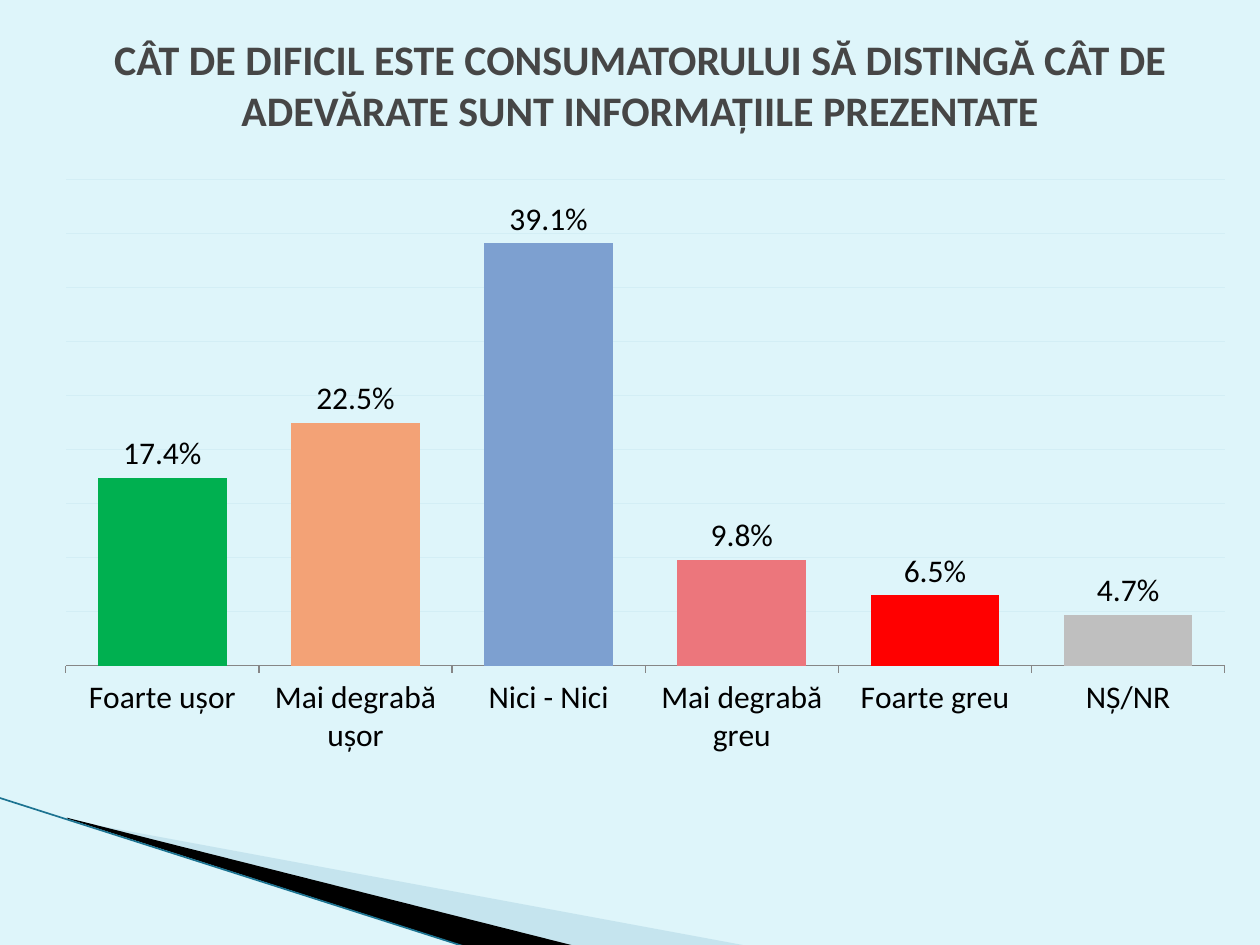
"""Build a slide with a column chart of how hard it is to judge information."""
from typing import NamedTuple

from lxml.etree import SubElement
from pptx import Presentation
from pptx.chart.data import CategoryChartData
from pptx.dml.color import RGBColor
from pptx.enum.chart import XL_CHART_TYPE, XL_LABEL_POSITION, XL_TICK_LABEL_POSITION, XL_TICK_MARK
from pptx.enum.text import MSO_ANCHOR, PP_ALIGN
from pptx.oxml.ns import qn
from pptx.slide import Slide
from pptx.util import Pt

BACKGROUND = RGBColor(0xDE, 0xF5, 0xFA)
PALE_BLUE = RGBColor(0xA0, 0xCB, 0xDC)
TEAL = RGBColor(0x1C, 0x73, 0x91)
GRID = RGBColor(0xD3, 0xEE, 0xF5)
AXIS = RGBColor(0x86, 0x86, 0x86)
TITLE_GREY = RGBColor(0x46, 0x46, 0x46)
BLACK = RGBColor(0x00, 0x00, 0x00)
GREEN = RGBColor(0x00, 0xB0, 0x50)
ORANGE = RGBColor(0xF3, 0xA2, 0x76)
BLUE = RGBColor(0x7D, 0xA0, 0xD0)
PINK = RGBColor(0xEC, 0x76, 0x7C)
RED = RGBColor(0xFF, 0x00, 0x00)
GREY = RGBColor(0xBF, 0xBF, 0xBF)

FONT = "Calibri"
PERCENT = "0.0%"
TITLE = "CÂT DE DIFICIL ESTE CONSUMATORULUI SĂ DISTINGĂ CÂT DE ADEVĂRATE SUNT INFORMAȚIILE PREZENTATE"


class Wedge(NamedTuple):
    """A filled corner decoration."""

    points: list[tuple[float, float]]
    color: RGBColor
    opacity: int = 100


class Answer(NamedTuple):
    """One column of the chart."""

    label: str
    share: float
    color: RGBColor


WEDGES = [
    Wedge([(39.6, 468.7), (428.4, 540.7), (328.3, 540.7), (39.6, 468)], PALE_BLUE, 40),
    Wedge([(38.2, 467.3), (329, 540.7), (267.8, 541.4), (38.9, 468)], BLACK),
]
ANSWERS = [
    Answer("Foarte ușor", 0.174, GREEN),
    Answer("Mai degrabă ușor", 0.225, ORANGE),
    Answer("Nici - Nici", 0.391, BLUE),
    Answer("Mai degrabă greu", 0.098, PINK),
    Answer("Foarte greu", 0.065, RED),
    Answer("NȘ/NR", 0.047, GREY),
]


def set_font(font, color: RGBColor, **values) -> None:
    """Apply a colour and format values to a font."""
    for name, value in values.items():
        setattr(font, name, value)
    font.color.rgb = color


def add_wedge(s: Slide, wedge: Wedge) -> None:
    """Draw one corner wedge."""
    start, *rest = [(Pt(x), Pt(y)) for x, y in wedge.points]
    builder = s.shapes.build_freeform(*start)
    builder.add_line_segments(rest)
    sp = builder.convert_to_shape()
    sp.shadow.inherit = False
    sp.line.fill.background()
    sp.fill.solid()
    sp.fill.fore_color.rgb = wedge.color
    if wedge.opacity < 100:
        color = sp.fill._xPr.find(f"{qn('a:solidFill')}/{qn('a:srgbClr')}")
        SubElement(color, qn("a:alpha"), val=str(wedge.opacity * 1000))


def add_edge(s: Slide) -> None:
    """Draw the thin line along the wedges."""
    line = s.shapes.add_connector(1, Pt(-0.7), Pt(455.8), Pt(267.1), Pt(541.4))
    line.line.color.rgb = TEAL
    line.line.width = Pt(0.95)
    SubElement(line._element.spPr, qn("a:effectLst"))


def add_title(s: Slide) -> None:
    """Write the centred title."""
    tf = s.shapes.add_textbox(Pt(41.8), Pt(18), Pt(648), Pt(60)).text_frame
    tf.word_wrap = True
    tf.vertical_anchor = MSO_ANCHOR.MIDDLE
    p = tf.paragraphs[0]
    p.alignment = PP_ALIGN.CENTER
    r = p.add_run()
    r.text = TITLE
    set_font(r.font, TITLE_GREY, name=FONT, size=Pt(24), bold=True)


def add_answer_chart(s: Slide, answers: list[Answer]) -> None:
    """Draw the column chart of answers."""
    data = CategoryChartData(number_format=PERCENT)
    data.categories = [a.label for a in answers]
    data.add_series("Series 1", [a.share for a in answers])
    chart = s.shapes.add_chart(
        XL_CHART_TYPE.COLUMN_CLUSTERED, Pt(23.8), Pt(95.8), Pt(689.8), Pt(342), data
    ).chart
    set_font(chart.font, BLACK, name=FONT, size=Pt(18))
    chart.has_title = False
    chart.has_legend = False

    values = chart.value_axis
    formats = {"visible": False, "minimum_scale": 0, "maximum_scale": 0.45,
               "major_unit": 0.05, "has_major_gridlines": True}
    for name, value in formats.items():
        setattr(values, name, value)
    values.tick_labels.number_format = PERCENT
    values.tick_labels.number_format_is_linked = False
    grid = values.major_gridlines.format.line
    grid.color.rgb = GRID
    grid.width = Pt(0.75)

    categories = chart.category_axis
    categories.major_tick_mark = XL_TICK_MARK.OUTSIDE
    categories.tick_label_position = XL_TICK_LABEL_POSITION.NEXT_TO_AXIS
    categories.format.line.color.rgb = AXIS

    plot = chart.plots[0]
    plot.gap_width = 50
    plot.vary_by_categories = False
    plot.has_data_labels = True
    formats = {"show_value": True, "number_format": PERCENT,
               "number_format_is_linked": False,
               "position": XL_LABEL_POSITION.OUTSIDE_END}
    for name, value in formats.items():
        setattr(plot.data_labels, name, value)
    for i, answer in enumerate(answers):
        fill = plot.series[0].points[i].format.fill
        fill.solid()
        fill.fore_color.rgb = answer.color


def main() -> None:
    """Build and save the slide."""
    prs = Presentation()
    prs.slide_width, prs.slide_height = Pt(720), Pt(540)
    s = prs.slides.add_slide(prs.slide_layouts[6])
    s.background.fill.solid()
    s.background.fill.fore_color.rgb = BACKGROUND
    for wedge in WEDGES:
        add_wedge(s, wedge)
    add_edge(s)
    add_title(s)
    add_answer_chart(s, ANSWERS)
    prs.save("out.pptx")


if __name__ == "__main__":
    main()
